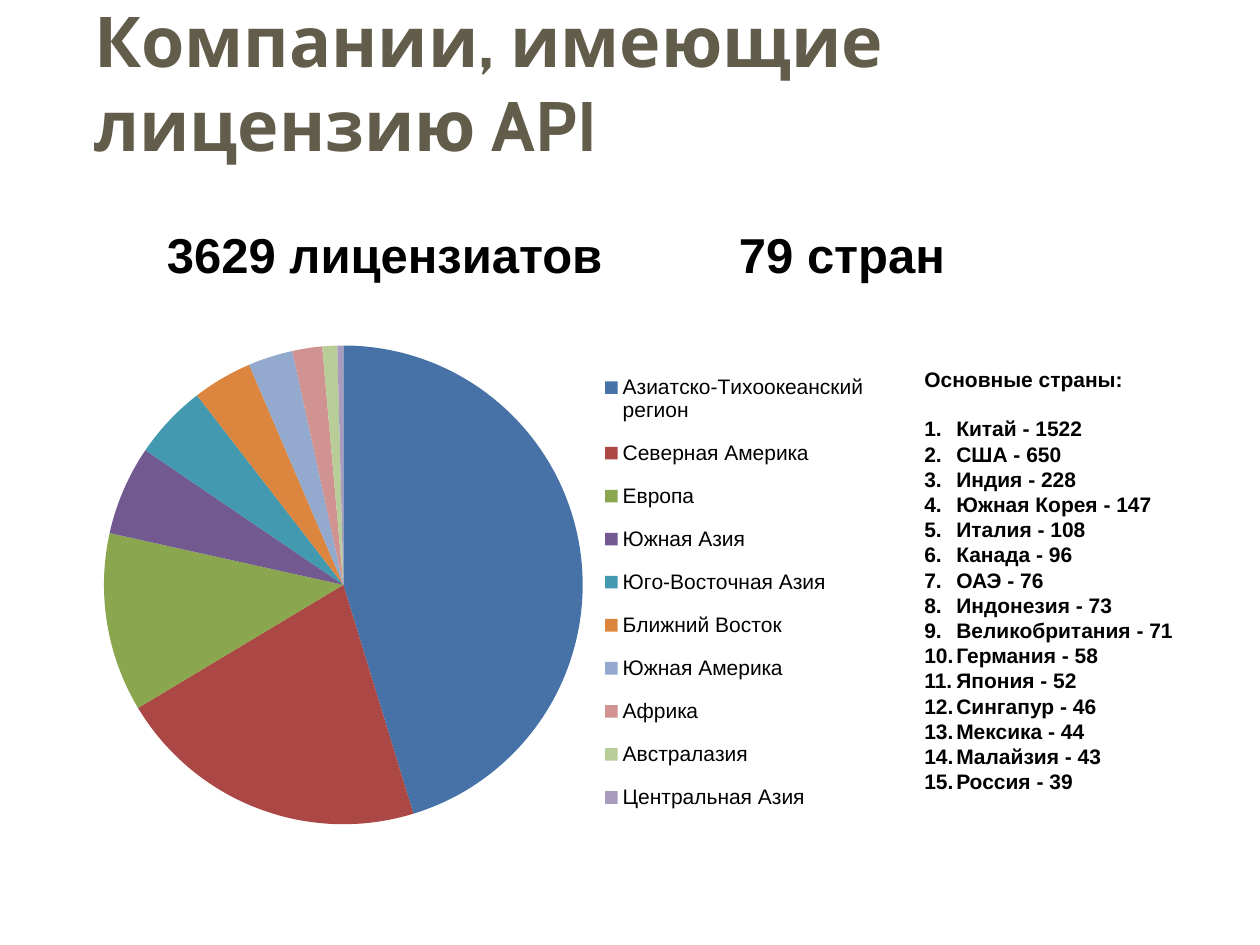
from lxml.etree import SubElement
from pptx import Presentation
from pptx.chart.data import CategoryChartData
from pptx.dml.color import RGBColor
from pptx.enum.chart import XL_CHART_TYPE as ChartType, XL_LEGEND_POSITION as LegendPosition
from pptx.enum.text import MSO_ANCHOR as Anchor
from pptx.oxml import parse_xml
from pptx.oxml.ns import nsdecls, qn
from pptx.util import Pt

PX = 914400 // 126
COLORS = {"title": "625C4B", "text": "000000"}
REGIONS = [
    ("Азиатско-Тихоокеанский регион", 45, "4672A8"),
    ("Северная Америка", 21, "AB4744"),
    ("Европа", 12, "8AA64F"),
    ("Южная Азия", 6, "725990"),
    ("Юго-Восточная Азия", 5, "4299B0"),
    ("Ближний Восток", 4, "DC853E"),
    ("Южная Америка", 3, "93A9CE"),
    ("Африка", 2, "D09392"),
    ("Австралазия", 1, "B8CD97"),
    ("Центральная Азия", 0.4, "A99BBD"),
]
COUNTRIES = [
    ("Китай", 1522), ("США", 650), ("Индия", 228), ("Южная Корея", 147),
    ("Италия", 108), ("Канада", 96), ("ОАЭ", 76), ("Индонезия", 73),
    ("Великобритания", 71), ("Германия", 58), ("Япония", 52),
    ("Сингапур", 46), ("Мексика", 44), ("Малайзия", 43), ("Россия", 39),
]


def set_font(font, color="text", **values):
    """Apply a colour and a dict of format values to a font."""
    font.color.rgb = RGBColor.from_string(COLORS[color])
    for name, value in values.items():
        setattr(font, name, value)


def add_text(page, frame, lines, color="text", **values):
    """Add a wrapped text box with one paragraph per line."""
    box = page.shapes.add_textbox(*(length * PX for length in frame))
    text = box.text_frame
    text.word_wrap = True
    for index, line in enumerate(lines):
        para = text.add_paragraph() if index else text.paragraphs[0]
        span = para.add_run()
        span.text = line
        set_font(span.font, color, **values)
    return text


def add_tab(para, position):
    """Put a left tab stop on a paragraph."""
    stops = SubElement(para._p.get_or_add_pPr(), qn("a:tabLst"))
    SubElement(stops, qn("a:tab"), pos=str(position * PX), algn="l")


def number_paragraphs(paras, indent):
    """Turn paragraphs into a numbered list with a hanging indent."""
    for para in paras:
        props = para._p.get_or_add_pPr()
        props.set("marL", str(indent * PX))
        props.set("indent", str(-indent * PX))
        SubElement(props, qn("a:buFont"), typeface="+mj-lt")
        SubElement(props, qn("a:buAutoNum"), type="arabicPeriod")


def place_part(part, index, **shares):
    """Fix the place of a chart part as shares of the chart area."""
    for old in part.findall(qn("c:layout")):
        part.remove(old)
    target = '<c:layoutTarget val="inner"/>' if index == 0 else ""
    modes = "".join(f'<c:{axis}Mode val="edge"/>' for axis in "xy")
    sizes = "".join(f'<c:{name} val="{share}"/>' for name, share in shares.items())
    layout = f"<c:layout {nsdecls('c')}><c:manualLayout>{target}{modes}{sizes}</c:manualLayout></c:layout>"
    part.insert(index, parse_xml(layout))


def add_pie(page, frame):
    """Add the pie of regions with its legend on the right."""
    data = CategoryChartData()
    data.categories = [name for name, _, _ in REGIONS]
    data.add_series("Series 1", [value for _, value, _ in REGIONS])
    area = [length * PX for length in frame]
    chart = page.shapes.add_chart(ChartType.PIE, *area, data).chart
    chart.has_title = False
    set_font(chart.font, name="Calibri", size=Pt(18))
    plot = chart.plots[0]
    plot.vary_by_categories = True
    for index, (_, _, color) in enumerate(REGIONS):
        fill = plot.series[0].points[index].format.fill
        fill.solid()
        fill.fore_color.rgb = RGBColor.from_string(color)
    chart.has_legend = True
    legend = chart.legend
    legend.position = LegendPosition.RIGHT
    legend.include_in_layout = False
    set_font(legend.font, name="Arial", size=Pt(12))
    place_part(chart._chartSpace.chart.plotArea, 0, x=0.02, y=0.04, w=0.6, h=0.93)
    place_part(legend._element, 1, x=0.64, y=0.06, w=0.34, h=0.92)


def main():
    """Build the slide and save the deck."""
    deck = Presentation()
    deck.slide_width, deck.slide_height = 1260 * PX, 945 * PX
    page = deck.slides.add_slide(deck.slide_layouts[6])

    title = add_text(page, (82, 33, 1097, 98), ["Компании, имеющие лицензию API"],
                     "title", name="Cabin", size=Pt(40), bold=True)
    title.vertical_anchor = Anchor.MIDDLE

    totals = add_text(page, (88, 218, 935, 72), ["3629 лицензиатов\t79 стран"],
                      name="Arial", size=Pt(28), bold=True)
    totals.margin_left = 79 * PX
    add_tab(totals.paragraphs[0], 572)

    add_pie(page, (88, 325, 798, 515))

    lines = ["Основные страны:"] + [f"{name} - {count}" for name, count in COUNTRIES]
    countries = add_text(page, (912, 360, 315, 445), lines,
                         name="Arial", size=Pt(12), bold=True)
    countries.paragraphs[0].space_after = Pt(14)
    number_paragraphs(countries.paragraphs[1:], 32)

    deck.save("out.pptx")


if __name__ == "__main__":
    main()
